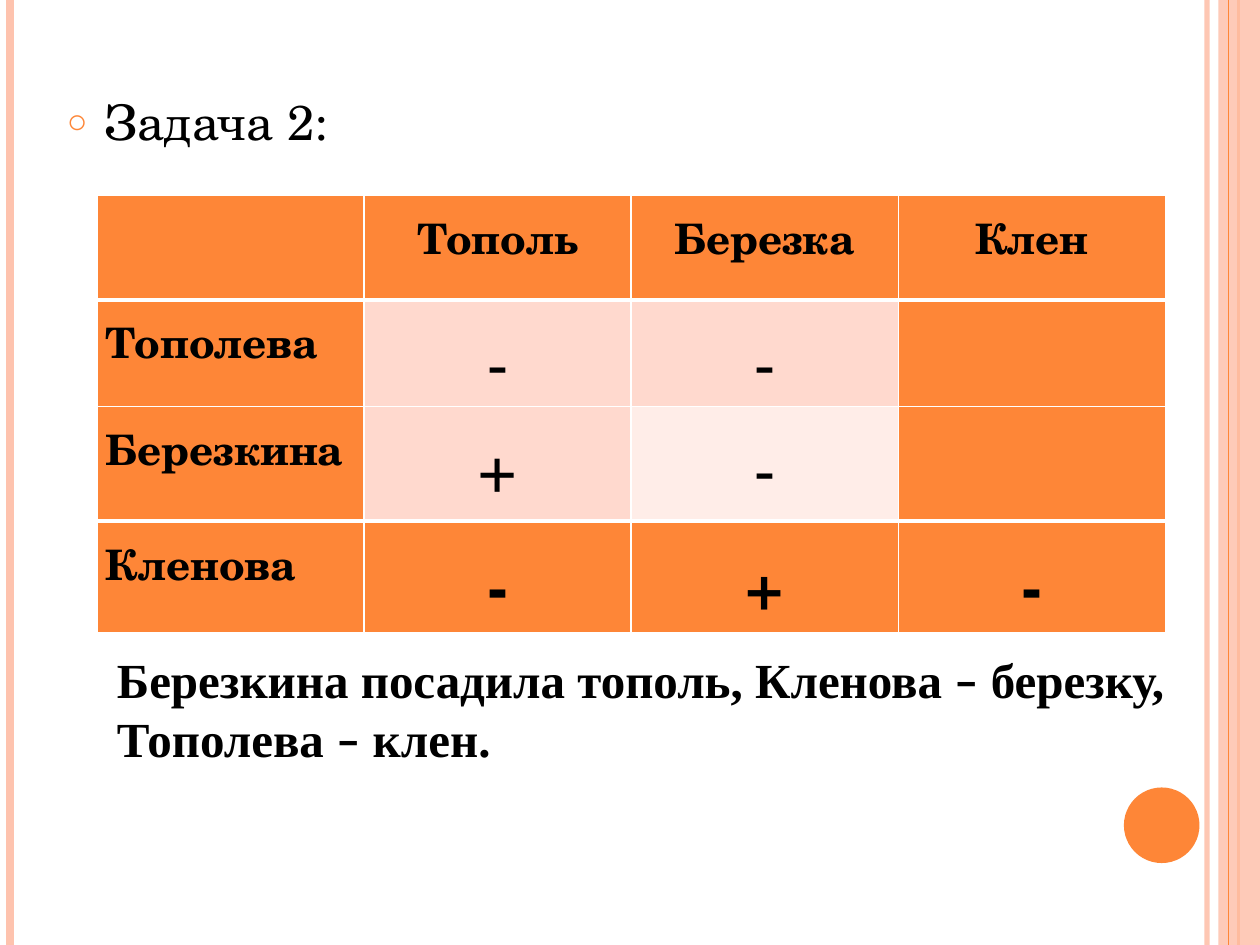
from lxml.etree import SubElement
from pptx import Presentation
from pptx.dml.color import RGBColor
from pptx.enum.shapes import MSO_CONNECTOR, MSO_SHAPE
from pptx.enum.text import MSO_ANCHOR, MSO_AUTO_SIZE, PP_ALIGN
from pptx.oxml.ns import qn
from pptx.util import Inches, Pt

COLORS = {
    "orange": "FE8637",
    "peach": "FEC3AE",
    "pale": "FFD9CE",
    "palest": "FFEDE8",
    "white": "FFFFFF",
    "black": "000000",
}
SERIF = "TeX Gyre Schola"
STRIPES = [
    (9.58, "peach", 3, 93),
    (0.08, "peach", 4.5, 100),
    (9.83, "orange", 1.5, 100),
    (9.75, "orange", 0.75, 100),
]
ANSWERS = [
    ["", "Тополь", "Березка", "Клен"],
    ["Тополева", "-", "-", ""],
    ["Березкина", "+", "-", ""],
    ["Кленова", "-", "+", "-"],
]
ROW_HEIGHTS = [0.83, 0.83, 0.91, 0.83]
CONCLUSION = [
    ["Березкина посадила тополь, Кленова ", "–", " березку,"],
    ["Тополева ", "–", " клен."],
]


def rgb(name):
    """Return the named colour."""
    return RGBColor.from_string(COLORS[name])


def set_alpha(properties, percent):
    """Make the colour inside the given properties partly transparent."""
    color = properties.find(".//" + qn("a:srgbClr"))
    SubElement(color, qn("a:alpha"), val=str(percent * 1000))


def format_run(run, font_name, size, bold=False):
    """Give a run its font, size, weight and black colour."""
    run.font.name = font_name
    run.font.size = Pt(size)
    run.font.bold = bold
    run.font.color.rgb = rgb("black")


def add_stripe(slide, left, color, width, opacity):
    """Draw a vertical line over the whole slide height."""
    stripe = slide.shapes.add_connector(
        MSO_CONNECTOR.STRAIGHT, Inches(left), 0, Inches(left), Inches(7.5))
    stripe.line.color.rgb = rgb(color)
    stripe.line.width = Pt(width)
    properties = stripe._element.spPr
    if opacity < 100:
        set_alpha(properties, opacity)
    SubElement(properties, qn("a:effectLst"))


def add_decoration(slide, kind, color, left, top, width, height):
    """Draw a plain filled shape without outline."""
    shape = slide.shapes.add_shape(
        kind, Inches(left), Inches(top), Inches(width), Inches(height))
    shape.shadow.inherit = False
    shape.fill.solid()
    shape.fill.fore_color.rgb = rgb(color)
    shape.line.fill.background()
    return shape


def fill_heading(placeholder):
    """Place the bulleted task heading."""
    placeholder.left, placeholder.top = Inches(0.43), Inches(0.68)
    placeholder.width, placeholder.height = Inches(8.17), Inches(5.33)
    placeholder.text_frame.text = "Задача 2:"
    paragraph = placeholder.text_frame.paragraphs[0]
    paragraph.space_before = Pt(6)
    format_run(paragraph.runs[0], SERIF, 28)
    properties = paragraph._p.get_or_add_pPr()
    properties.set("marL", str(Inches(0.3)))
    properties.set("indent", str(Inches(-0.3)))
    bullet_color = SubElement(properties, qn("a:buClr"))
    SubElement(bullet_color, qn("a:srgbClr"), val=COLORS["orange"])
    SubElement(properties, qn("a:buSzPct"), val="70000")
    SubElement(properties, qn("a:buChar"), char="○")


def set_borders(cell, top, bottom):
    """Draw white cell borders with the given top and bottom widths."""
    properties = cell._tc.get_or_add_tcPr()
    for side, width in (("L", 1), ("R", 1), ("T", top), ("B", bottom)):
        border = SubElement(properties, qn(f"a:ln{side}"), w=str(Pt(width)))
        fill = SubElement(border, qn("a:solidFill"))
        SubElement(fill, qn("a:srgbClr"), val=COLORS["white"])


def cell_color(row, column):
    """Choose orange for the frame and pale tints for the inner cells."""
    if row in (0, 3) or column in (0, 3):
        return "orange"
    return "palest" if row == column == 2 else "pale"


def fill_cell(cell, text, row, column):
    """Write and format one table cell."""
    set_borders(cell, 3 if row in (1, 3) else 1, 3 if row in (0, 2) else 1)
    cell.fill.solid()
    cell.fill.fore_color.rgb = rgb(cell_color(row, column))
    if not text:
        return
    cell.margin_left = cell.margin_right = Inches(0.07)
    cell.margin_top = cell.margin_bottom = 0
    cell.text_frame.text = text
    paragraph = cell.text_frame.paragraphs[0]
    paragraph.alignment = PP_ALIGN.CENTER if column else PP_ALIGN.LEFT
    paragraph.line_spacing = 1.15
    paragraph.space_before = paragraph.space_after = Pt(6)
    is_label = row == 0 or column == 0
    format_run(paragraph.runs[0], SERIF, 24 if is_label else 36, is_label or row == 3)


def add_answer_table(slide):
    """Add the table that matches the surnames with the trees."""
    table = slide.shapes.add_table(
        4, 4, Inches(0.77), Inches(1.55), Inches(8.48), Inches(sum(ROW_HEIGHTS))).table
    for table_row, height in zip(table.rows, ROW_HEIGHTS):
        table_row.height = Inches(height)
    for row, texts in enumerate(ANSWERS):
        for column, text in enumerate(texts):
            fill_cell(table.cell(row, column), text, row, column)


def add_conclusion(slide):
    """Add the bold answer below the table."""
    box = slide.shapes.add_textbox(Inches(0.83), Inches(5.1), Inches(8.7), Inches(1.04))
    frame = box.text_frame
    frame.word_wrap = False
    frame.auto_size = MSO_AUTO_SIZE.SHAPE_TO_FIT_TEXT
    frame.vertical_anchor = MSO_ANCHOR.MIDDLE
    for index, parts in enumerate(CONCLUSION):
        paragraph = frame.add_paragraph() if index else frame.paragraphs[0]
        for part in parts:
            run = paragraph.add_run()
            run.text = part
            format_run(run, "Calibri" if part == "–" else "Times New Roman", 28, True)


def main():
    """Build and save the slide."""
    presentation = Presentation()
    presentation.slide_width, presentation.slide_height = Inches(10), Inches(7.5)
    slide = presentation.slides.add_slide(presentation.slide_layouts[1])
    title = slide.shapes.title._element
    title.getparent().remove(title)
    for stripe in STRIPES[:3]:
        add_stripe(slide, *stripe)
    band = add_decoration(slide, MSO_SHAPE.RECTANGLE, "peach", 9.67, 0, 0.33, 7.5)
    set_alpha(band._element.spPr, 87)
    add_stripe(slide, *STRIPES[3])
    add_decoration(slide, MSO_SHAPE.OVAL, "orange", 8.92, 6.25, 0.6, 0.6)
    fill_heading(slide.placeholders[1])
    add_answer_table(slide)
    add_conclusion(slide)
    presentation.save("out.pptx")


if __name__ == "__main__":
    main()
